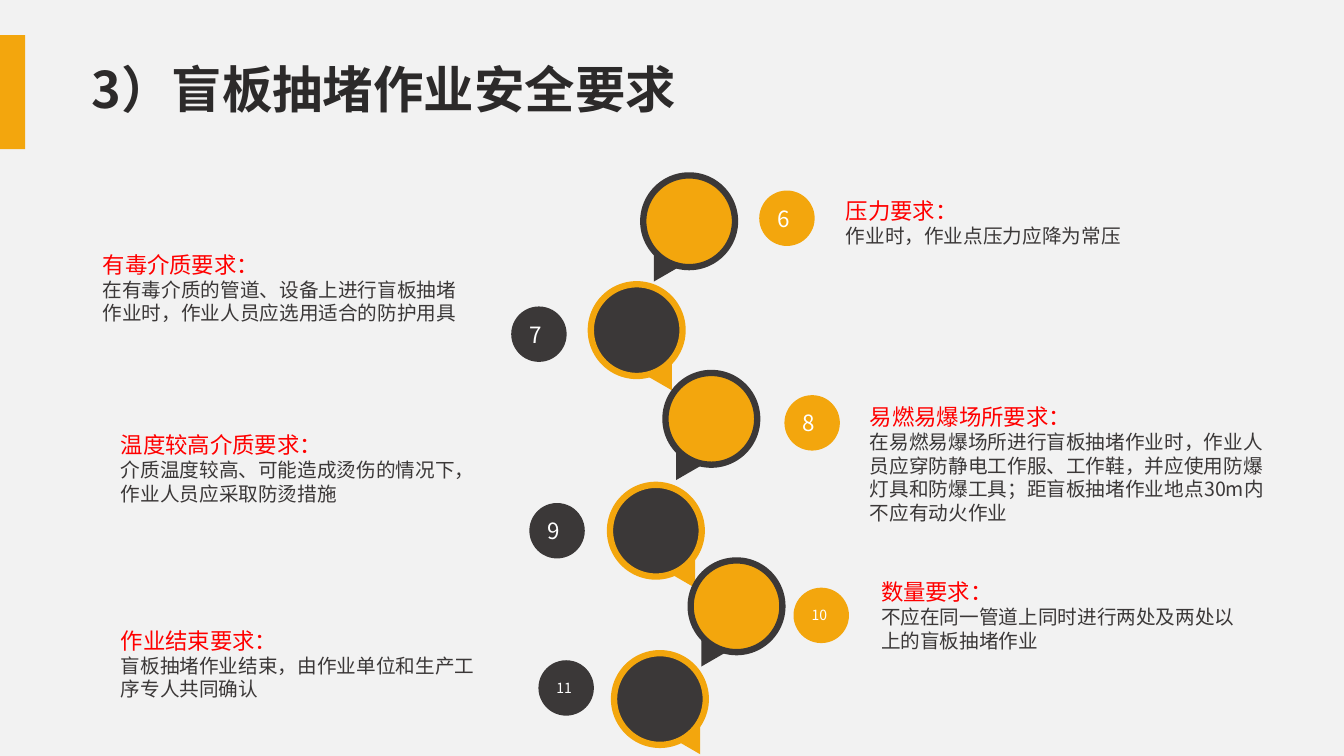
from pptx import Presentation
from pptx.dml.color import RGBColor
from pptx.enum.shapes import MSO_SHAPE
from pptx.enum.text import MSO_ANCHOR, PP_ALIGN
from pptx.oxml.ns import qn
from pptx.util import Inches, Pt
from lxml import etree

OVAL, TRIANGLE, RECT = MSO_SHAPE.OVAL, MSO_SHAPE.ISOSCELES_TRIANGLE, MSO_SHAPE.RECTANGLE
TOP, MIDDLE, LEFT = MSO_ANCHOR.TOP, MSO_ANCHOR.MIDDLE, PP_ALIGN.LEFT
FONT = "Noto Sans CJK SC"
COLORS = {"back": "F2F2F2", "gold": "F3A60D", "dark": "3B3838",
          "title": "2C2A2A", "red": "FF0000", "white": "FFFFFF"}
FORMATS = {
    "title": {"size": Pt(36), "bold": True},
    "heading": {"size": Pt(16)},
    "body": {"size": Pt(14)},
    "number": {"size": Pt(16)},
    "small number": {"size": Pt(10)},
}

prs = Presentation()
prs.slide_width, prs.slide_height = Inches(13.33), Inches(7.5)
# Fine grid: 1333 columns by 750 rows
COL, ROW = prs.slide_width / 1333, prs.slide_height / 750
s = prs.slides.add_slide(prs.slide_layouts[6])
s.background.fill.solid()
s.background.fill.fore_color.rgb = RGBColor.from_string(COLORS["back"])


def add_shape(kind, col, row, cols, rows, fill, line=None, rotation=0):
    sp = s.shapes.add_shape(kind, round(col * COL), round(row * ROW),
                            round(cols * COL), round(rows * ROW))
    sp.shadow.inherit = False
    sp.rotation = rotation
    sp.fill.solid()
    sp.fill.fore_color.rgb = RGBColor.from_string(COLORS[fill])
    if line:
        sp.line.color.rgb = RGBColor.from_string(COLORS[line])
        sp.line.width = Pt(4.5)
    else:
        sp.line.fill.background()
    return sp


def write(sp, anchor, lines):
    tf = sp.text_frame
    tf.word_wrap = True
    tf.vertical_anchor = anchor
    for i, (text, style, color) in enumerate(lines):
        p = tf.add_paragraph() if i else tf.paragraphs[0]
        p.alignment = LEFT
        r = p.add_run()
        r.text = text
        r.font.name = FONT
        for name, value in FORMATS[style].items():
            setattr(r.font, name, value)
        r.font.color.rgb = RGBColor.from_string(COLORS[color])
        # East Asian typeface
        etree.SubElement(r.font._element, qn("a:ea"), typeface=FONT)


# Title with its side bar
add_shape(RECT, -1, 35, 26, 113, "gold")
title = s.shapes.add_textbox(round(81 * COL), round(40 * ROW),
                             round(875 * COL), round(102 * ROW))
write(title, MIDDLE, [("3）盲板抽堵作业安全要求", "title", "title")])
title.text_frame.paragraphs[0].line_spacing = 0.9

# Number, ball, tail offset, badge, text box, heading, body
REQUIREMENTS = [
    (6, (638, 174), (2, 81), (753, 189), (829, 191, 425, 112),
     "压力要求：", "作业时，作业点压力应降为常压"),
    (7, (586, 282), (59, 81), (507, 304), (92, 244, 385, 131),
     "有毒介质要求：",
     "在有毒介质的管道、设备上进行盲板抽堵作业时，作业人员应选用适合的防护用具"),
    (8, (660, 370), (2, 82), (778, 392), (853, 395, 412, 103),
     "易燃易爆场所要求：",
     "在易燃易爆场所进行盲板抽堵作业时，作业人员应穿防静电工作服、工作鞋，"
     "并应使用防爆灯具和防爆工具；距盲板抽堵作业地点30m内不应有动火作业"),
    (9, (605, 481), (63, 78), (525, 499), (110, 423, 385, 131),
     "温度较高介质要求：",
     "介质温度较高、可能造成烫伤的情况下，作业人员应采取防烫措施"),
    (10, (685, 556), (2, 81), (787, 583), (864, 569, 390, 131),
     "数量要求：", "不应在同一管道上同时进行两处及两处以上的盲板抽堵作业"),
    (11, (609, 648), (64, 76), (534, 655), (110, 617, 390, 131),
     "作业结束要求：", "盲板抽堵作业结束，由作业单位和生产工序专人共同确认"),
]
BALL, BADGE = 91, 55

for number, (x, y), (dx, dy), badge_at, box, heading, body in REQUIREMENTS:
    # Even numbers are gold on the right, odd ones dark on the left
    fill, rim, turn = ("dark", "gold", 150) if number % 2 else ("gold", "dark", 210)
    add_shape(TRIANGLE, x + dx, y + dy, 30, 26, rim, rotation=turn)
    add_shape(OVAL, x, y, BALL, BALL, fill, line=rim)

    # Number badge
    badge = add_shape(OVAL, *badge_at, BADGE, BADGE, fill)
    style = "number" if number < 10 else "small number"
    write(badge, MIDDLE, [(str(number), style, "white")])

    # Heading and body
    left, top, width, height = box
    tb = s.shapes.add_textbox(round(left * COL), round(top * ROW),
                              round(width * COL), round(height * ROW))
    write(tb, TOP, [(heading, "heading", "red"), (body, "body", "dark")])

prs.save("out.pptx")
